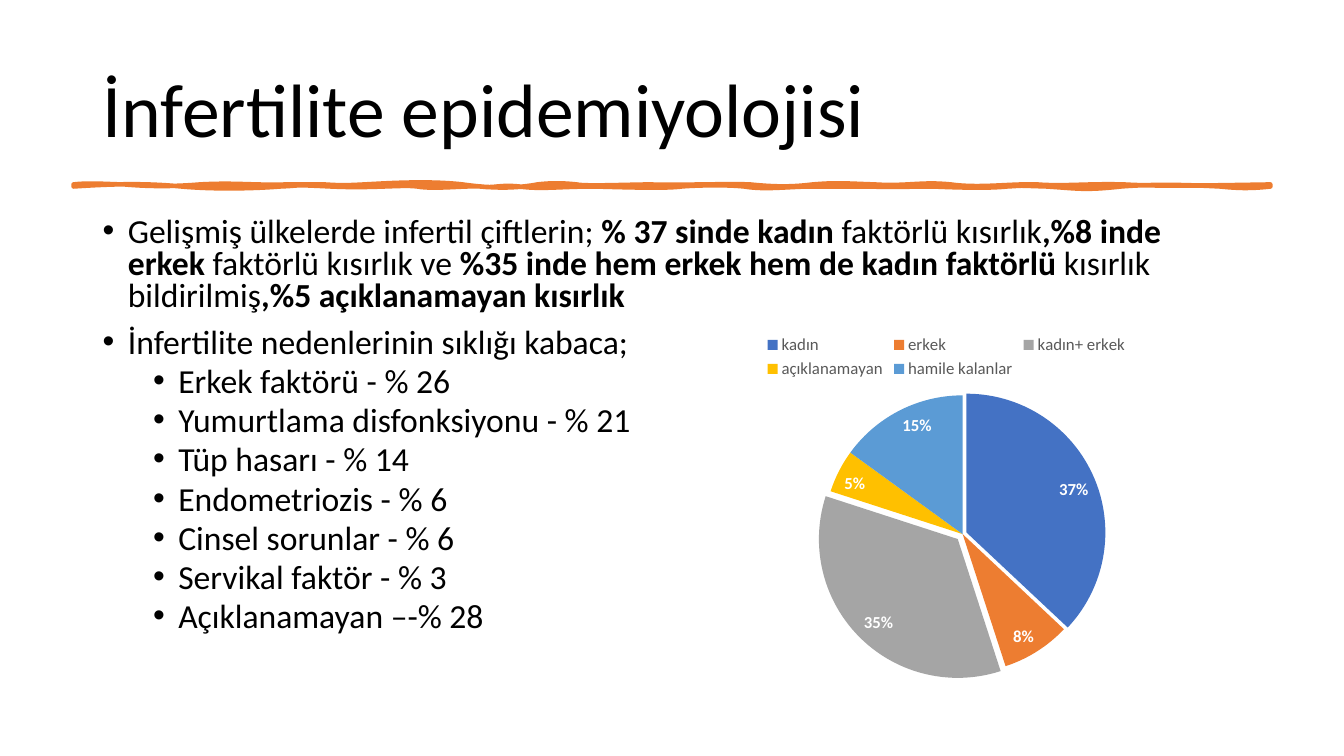
from dataclasses import dataclass

from lxml.etree import SubElement
from pptx import Presentation
from pptx.chart.data import CategoryChartData
from pptx.dml.color import RGBColor
from pptx.enum.chart import XL_CHART_TYPE as ChartType
from pptx.enum.chart import XL_LABEL_POSITION as LabelPosition
from pptx.enum.chart import XL_LEGEND_POSITION as LegendPosition
from pptx.enum.text import MSO_ANCHOR as Anchor
from pptx.oxml import parse_xml
from pptx.oxml.ns import nsdecls, qn
from pptx.util import Inches, Pt


@dataclass(frozen=True)
class Theme:
    font: str = "Calibri"
    text: RGBColor = RGBColor(0, 0, 0)
    accent: RGBColor = RGBColor(0xED, 0x7D, 0x31)
    legend: RGBColor = RGBColor(0x59, 0x59, 0x59)
    label: RGBColor = RGBColor(0xFF, 0xFF, 0xFF)
    slices: tuple = ("4472C4", "ED7D31", "A5A5A5", "FFC000", "5B9BD5")
    title_size: Pt = Pt(54)
    body_size: Pt = Pt(24)
    chart_size: Pt = Pt(10)
    label_size: Pt = Pt(12)


THEME = Theme()

TITLE = "İnfertilite epidemiyolojisi"
# Each run is (text, bold)
FINDINGS = [
    ("Gelişmiş ülkelerde infertil çiftlerin; ", False),
    ("% 37 sinde kadın ", True),
    ("faktörlü kısırlık", False),
    (",%8 inde erkek ", True),
    ("faktörlü kısırlık ve ", False),
    ("%35 inde hem erkek hem de kadın faktörlü ", True),
    ("kısırlık bildirilmiş", False),
    (",%5 açıklanamayan kısırlık", True),
]
CAUSES_INTRO = "İnfertilite nedenlerinin sıklığı kabaca;"
CAUSES = [
    "Erkek faktörü - % 26",
    "Yumurtlama disfonksiyonu - % 21",
    "Tüp hasarı - % 14",
    "Endometriozis - % 6",
    "Cinsel sorunlar - % 6",
    "Servikal faktör - % 3",
    "Açıklanamayan –-% 28",
]
SHARES = {"kadın": 37, "erkek": 8, "kadın+ erkek": 35,
          "açıklanamayan": 5, "hamile kalanlar": 15}
EXPLOSIONS = {"kadın": 3, "kadın+ erkek": 5}

# Brush stroke edges: two control points and the x where each curve ends
STROKE_LEFT, STROKE_RIGHT = 0.73, 12.6
TOP_Y, BOTTOM_Y = 1.83, 1.85
TOP_CURVES = [
    (0.89, 1.81, 1.11, 1.83, 1.24), (1.36, 1.84, 1.62, 1.86, 1.98),
    (2.34, 1.81, 2.51, 1.84, 2.84), (3.17, 1.83, 3.07, 1.83, 3.22),
    (3.38, 1.84, 3.42, 1.84, 3.61), (3.8, 1.82, 4.24, 1.79, 4.59),
    (4.94, 1.88, 5.17, 1.86, 5.33), (5.49, 1.81, 5.63, 1.82, 5.72),
    (5.81, 1.85, 6.25, 1.83, 6.46), (6.67, 1.84, 7.23, 1.82, 7.44),
    (7.65, 1.85, 7.82, 1.86, 8.06), (8.3, 1.81, 8.38, 1.82, 8.68),
    (8.99, 1.85, 9.14, 1.8, 9.43), (9.72, 1.87, 10.02, 1.82, 10.29),
    (10.55, 1.85, 10.78, 1.82, 11.15), (11.51, 1.85, 11.99, 1.84, 12.6),
]
BOTTOM_CURVES = [
    (12.42, 1.87, 12.3, 1.87, 12.1), (11.9, 1.84, 11.49, 1.82, 11.12),
    (10.75, 1.89, 10.7, 1.87, 10.38), (10.05, 1.84, 10.18, 1.84, 9.99),
    (9.8, 1.87, 9.48, 1.86, 9.25), (9.02, 1.85, 8.84, 1.86, 8.63),
    (8.41, 1.85, 8.28, 1.85, 8), (7.73, 1.86, 7.57, 1.88, 7.38),
    (7.19, 1.83, 6.88, 1.84, 6.76), (6.63, 1.87, 6.24, 1.86, 5.9),
    (5.55, 1.85, 5.37, 1.88, 5.15), (4.94, 1.83, 4.91, 1.87, 4.77),
    (4.63, 1.84, 4.3, 1.88, 4.14), (3.99, 1.83, 3.71, 1.87, 3.28),
    (2.86, 1.83, 3.03, 1.84, 2.78), (2.53, 1.87, 2.13, 1.88, 1.8),
    (1.47, 1.82, 1.18, 1.82, 0.73),
]


def set_format(target, **values):
    for name, value in values.items():
        setattr(target, name, value)


def set_font(font, size, color, bold=False):
    set_format(font, name=THEME.font, size=size, bold=bold)
    font.color.rgb = color


def add_text_frame(slide, left, top, width, height, anchor):
    box = slide.shapes.add_textbox(*map(Inches, (left, top, width, height)))
    set_format(box.text_frame, word_wrap=True, vertical_anchor=anchor)
    return box.text_frame


def add_title(slide):
    frame = add_text_frame(slide, 0.92, 0.4, 11.5, 1.45, Anchor.MIDDLE)
    title = frame.paragraphs[0]
    title.line_spacing = 0.9
    title.text = TITLE
    set_font(title.runs[0].font, THEME.title_size, THEME.text)


def add_bullet(paragraph, runs, level=0, space_before=None):
    properties = paragraph._p.get_or_add_pPr()
    properties.set("marL", str(Inches(0.25 + 0.5 * level)))
    properties.set("indent", str(Inches(-0.25)))
    SubElement(properties, qn("a:buFont"), typeface="Arial")
    SubElement(properties, qn("a:buChar"), char="•")
    set_format(paragraph, level=level, line_spacing=0.8, space_before=space_before)
    for text, bold in runs:
        run = paragraph.add_run()
        run.text = text
        set_font(run.font, THEME.body_size, THEME.text, bold)


def add_body(slide):
    frame = add_text_frame(slide, 0.92, 2.11, 11.5, 4.65, Anchor.TOP)
    add_bullet(frame.paragraphs[0], FINDINGS)
    add_bullet(frame.add_paragraph(), [(CAUSES_INTRO, False)], space_before=Pt(10))
    for cause in CAUSES:
        add_bullet(frame.add_paragraph(), [(cause, False)], 1, Pt(5))


def edge_points(edge_y, curves):
    """Two control points and an end point for each curve along an edge."""
    for x1, y1, x2, y2, end_x in curves:
        for x, y in ((x1, y1), (x2, y2), (end_x, edge_y)):
            yield Inches(x), Inches(y)


def bend_lines(outline):
    """Turn each run of three line segments into one cubic curve."""
    lines = outline.findall(qn("a:lnTo"))
    for first, second, third in zip(lines[::3], lines[1::3], lines[2::3]):
        curve = parse_xml(f'<a:cubicBezTo {nsdecls("a")}/>')
        first.addprevious(curve)
        for line in (first, second, third):
            curve.append(line[0])
            outline.remove(line)


def fit_to_edges(stroke, outline):
    """Let the frame span the two edges, with control points free to pass it."""
    shift = Inches(TOP_Y) - stroke.top
    for point in outline.iter(qn("a:pt")):
        point.set("y", str(int(point.get("y")) - shift))
    set_format(stroke, top=Inches(TOP_Y), height=Inches(BOTTOM_Y - TOP_Y))
    outline.set("h", str(stroke.height))


def add_brush_stroke(slide):
    builder = slide.shapes.build_freeform(Inches(STROKE_LEFT), Inches(TOP_Y))
    builder.add_line_segments(edge_points(TOP_Y, TOP_CURVES), close=False)
    right_end = (STROKE_RIGHT, TOP_Y, STROKE_RIGHT, BOTTOM_Y, STROKE_RIGHT)
    builder.add_line_segments(edge_points(BOTTOM_Y, [right_end, *BOTTOM_CURVES]))
    stroke = builder.convert_to_shape()
    outline = next(stroke._element.iter(qn("a:path")))
    bend_lines(outline)
    fit_to_edges(stroke, outline)
    stroke.shadow.inherit = False
    stroke.fill.solid()
    stroke.fill.fore_color.rgb = THEME.accent
    stroke.line.color.rgb = THEME.accent
    stroke.line.width = Pt(3.25)


def set_plot_area(chart, x, y, w, h):
    """Fix the inner plot area, in fractions of the chart."""
    values = "".join(f'<c:{tag} val="{value}"/>' for tag, value in (
        ("layoutTarget", "inner"), ("xMode", "edge"), ("yMode", "edge"),
        ("x", x), ("y", y), ("w", w), ("h", h)))
    layout = parse_xml(f'<c:layout {nsdecls("c")}><c:manualLayout>{values}'
                       '</c:manualLayout></c:layout>')
    plot_area = chart._chartSpace.chart.plotArea
    for old in plot_area.findall(qn("c:layout")):
        plot_area.remove(old)
    plot_area.insert(0, layout)


def add_share_pie(slide):
    data = CategoryChartData()
    data.categories = list(SHARES)
    data.add_series("Series 1", list(SHARES.values()))
    area = map(Inches, (7.05, 3.21, 4.67, 3.7))
    chart = slide.shapes.add_chart(ChartType.PIE, *area, data).chart
    set_format(chart, has_title=False, has_legend=True)
    set_font(chart.font, THEME.chart_size, THEME.text)
    set_format(chart.legend, position=LegendPosition.TOP, include_in_layout=False)
    set_font(chart.legend.font, THEME.label_size, THEME.legend)
    set_plot_area(chart, 0.24, 0.19, 0.59, 0.75)

    pie = chart.plots[0]
    set_format(pie, vary_by_categories=True, has_data_labels=True)
    set_format(pie.data_labels, show_percentage=True, show_value=False,
               number_format="0%", number_format_is_linked=False,
               position=LabelPosition.INSIDE_END)
    set_font(pie.data_labels.font, THEME.label_size, THEME.label, bold=True)
    for index, (share, color) in enumerate(zip(SHARES, THEME.slices)):
        piece = pie.series[0].points[index].format
        piece.fill.solid()
        piece.fill.fore_color.rgb = RGBColor.from_string(color)
        if share in EXPLOSIONS:
            explosion = parse_xml(f'<c:explosion {nsdecls("c")} val="{EXPLOSIONS[share]}"/>')
            piece._element.find(qn("c:spPr")).addprevious(explosion)


def main():
    deck = Presentation()
    set_format(deck, slide_width=Inches(13.33), slide_height=Inches(7.5))
    slide = deck.slides.add_slide(deck.slide_layouts[6])
    add_title(slide)
    add_brush_stroke(slide)
    add_body(slide)
    add_share_pie(slide)
    deck.save("out.pptx")


if __name__ == "__main__":
    main()
